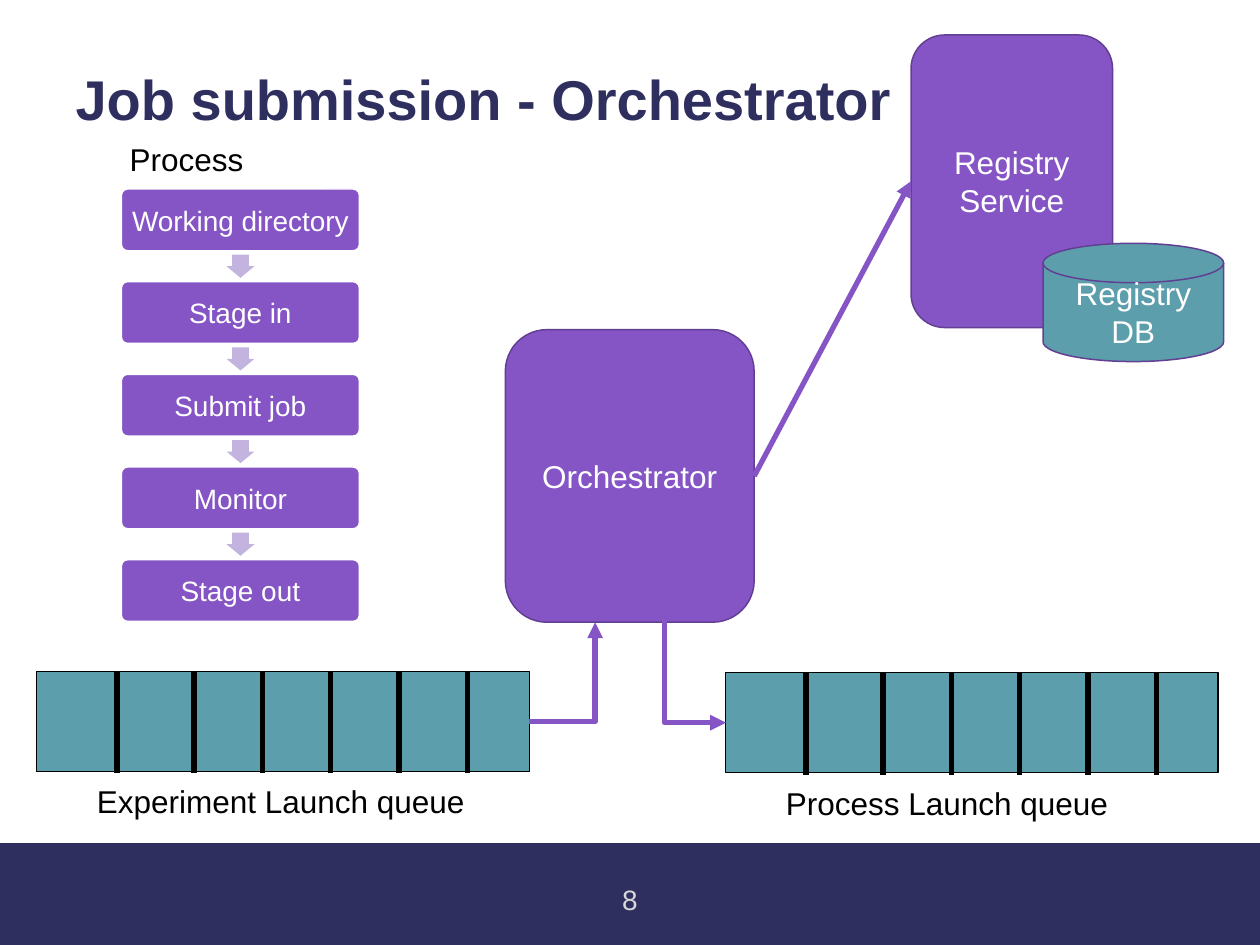
"""Build the job submission slide showing the orchestrator, its queues and the registry."""
from dataclasses import dataclass

from lxml import etree
from pptx import Presentation
from pptx.dml.color import RGBColor
from pptx.enum.shapes import MSO_CONNECTOR, MSO_SHAPE
from pptx.enum.text import MSO_ANCHOR, MSO_AUTO_SIZE, PP_ALIGN
from pptx.oxml.ns import qn
from pptx.util import Pt

RECTANGLE, ROUNDED = MSO_SHAPE.RECTANGLE, MSO_SHAPE.ROUNDED_RECTANGLE
ARROW, DISK = MSO_SHAPE.RIGHT_ARROW, MSO_SHAPE.FLOWCHART_MAGNETIC_DISK
STRAIGHT, ELBOW = MSO_CONNECTOR.STRAIGHT, MSO_CONNECTOR.ELBOW
LEFT, CENTER = PP_ALIGN.LEFT, PP_ALIGN.CENTER
MIDDLE, TOP = MSO_ANCHOR.MIDDLE, MSO_ANCHOR.TOP


@dataclass(frozen=True)
class Theme:
    font: str = "Arial"
    navy: str = "2F2F5F"
    purple: str = "8555C6"
    outline: str = "623F92"
    lilac: str = "C2B4DF"
    teal: str = "5C9EAC"
    white: str = "FFFFFF"
    black: str = "000000"
    grey: str = "D8D8D8"
    title: int = 32
    label: int = 18
    small: int = 16
    thin: float = 0.85
    thick: float = 3


theme = Theme()
deck = Presentation()
deck.slide_width, deck.slide_height = Pt(720), Pt(540)
page = deck.slides.add_slide(deck.slide_layouts[5])
page.background.fill.solid()
page.background.fill.fore_color.rgb = RGBColor.from_string(theme.navy)


def add_block(kind, bounds, fill, line=None):
    block = page.shapes.add_shape(kind, *map(Pt, bounds))
    block.shadow.inherit = False
    block.fill.solid()
    block.fill.fore_color.rgb = RGBColor.from_string(fill)
    if line:
        block.line.color.rgb = RGBColor.from_string(line)
        block.line.width = Pt(theme.thin)
    else:
        block.line.fill.background()
    return block


def write(box, text, size, color, align=CENTER, anchor=MIDDLE, wrap=True):
    frame = box.text_frame
    frame.text = text
    frame.word_wrap = wrap
    frame.auto_size = MSO_AUTO_SIZE.NONE
    frame.vertical_anchor = anchor
    for para in frame.paragraphs:
        para.alignment = align
        for span in para.runs:
            span.font.name = theme.font
            span.font.size = Pt(size)
            span.font.color.rgb = RGBColor.from_string(color)


panel = add_block(RECTANGLE, (0, 0, 720, 481.7), theme.white)
page.shapes._spTree.insert(2, panel._element)

title = page.shapes.title
title.left, title.top, title.width, title.height = Pt(36), Pt(13), Pt(648), Pt(86.4)
write(title, "Job submission - Orchestrator", theme.title, theme.navy, LEFT)
title.text_frame.paragraphs[0].runs[0].font.bold = True

number = page.shapes.add_textbox(Pt(320.4), Pt(497), Pt(79.2), Pt(34))
write(number, "8", theme.small, theme.grey)

steps = ["Working directory", "Stage in", "Submit job", "Monitor", "Stage out"]
step_pitch = 52.95
for index, name in enumerate(steps):
    top = 108 + index * step_pitch
    step = add_block(ROUNDED, (69.4, top, 136, 35.3), theme.purple, theme.white)
    step.adjustments[0] = 0.1
    write(step, name, theme.small, theme.white)
    step.text_frame.margin_left = step.text_frame.margin_right = Pt(5)
    if index < len(steps) - 1:
        arrow = add_block(ARROW, (130.8, top + 36.2, 13.2, 15.9), theme.lilac)
        arrow.rotation = 90
        arrow.adjustments[0] = 0.6

registry = add_block(ROUNDED, (520.6, 20, 115.2, 167.2), theme.purple, theme.outline)
write(registry, "Registry\nService", theme.label, theme.white)
database = add_block(DISK, (596, 139, 103.2, 67.6), theme.teal, theme.outline)
write(database, "Registry DB", theme.label, theme.white)

lines = []
queues = [("Experiment Launch queue", 20.9, 383.8, 226.8),
          ("Process Launch queue", 414.6, 384.4, 200.2)]
dividers = [46] + [90 + 39.05 * index for index in range(5)]
for name, left, top, width in queues:
    add_block(RECTANGLE, (left, top, 281.6, 57.2), theme.teal, theme.black)
    for offset in dividers:
        ends = left + offset, top, left + offset, top + 58.2
        divider = page.shapes.add_connector(STRAIGHT, *map(Pt, ends))
        lines.append((divider, theme.black, False))
    caption = page.shapes.add_textbox(Pt(left + 27.4), Pt(top + 59.8), Pt(width), Pt(29))
    write(caption, name, theme.label, theme.black, LEFT, TOP, wrap=False)

orchestrator = add_block(ROUNDED, (288.8, 188.4, 142.2, 167.2), theme.purple, theme.outline)
write(orchestrator, "Orchestrator", theme.label, theme.white)

process = page.shapes.add_textbox(Pt(67), Pt(76.4), Pt(156), Pt(29))
write(process, "Process", theme.label, theme.black, LEFT, TOP)

flows = [(ELBOW, (302.5, 412.4, 340.1, 355.6), 0),
         (ELBOW, (426.6, 366, 367.9, 401.2), 270),
         (STRAIGHT, (431, 272, 520.6, 103.6), 0)]
for kind, ends, turn in flows:
    flow = page.shapes.add_connector(kind, *map(Pt, ends))
    properties = flow._element.spPr
    if kind == ELBOW:
        properties.find(qn("a:prstGeom")).set("prst", "bentConnector2")
    if turn:
        properties.find(qn("a:xfrm")).set("rot", str(turn * 60000))
    lines.append((flow, theme.purple, True))

for connector, color, pointed in lines:
    connector.line.color.rgb = RGBColor.from_string(color)
    connector.line.width = Pt(theme.thick)
    if pointed:
        etree.SubElement(connector.line._get_or_add_ln(), qn("a:tailEnd"), type="triangle")
    etree.SubElement(connector._element.spPr, qn("a:effectLst"))

deck.save("out.pptx")
